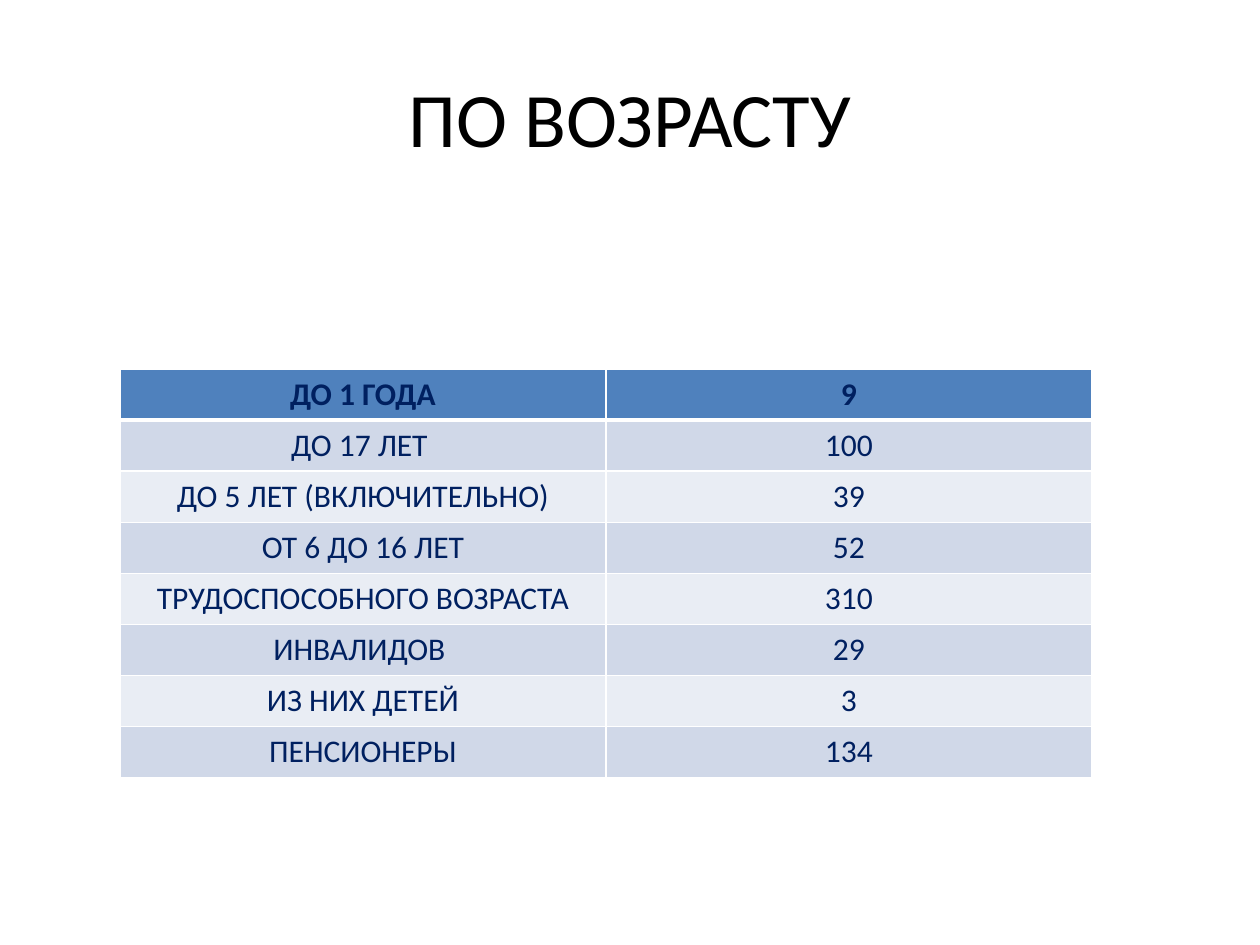
"""Build a slide with a table of residents by age."""
from lxml import etree
from pptx import Presentation
from pptx.dml.color import RGBColor
from pptx.enum.text import MSO_ANCHOR, PP_ALIGN
from pptx.oxml.ns import qn
from pptx.util import Pt

CENTER, MIDDLE = PP_ALIGN.CENTER, MSO_ANCHOR.MIDDLE
PX = 914400 // 126

TITLE = "ПО ВОЗРАСТУ"
ROWS = [
    ("ДО 1 ГОДА", "9"),
    ("ДО 17 ЛЕТ ", "100"),
    ("ДО 5 ЛЕТ (ВКЛЮЧИТЕЛЬНО)", "39"),
    ("ОТ 6 ДО 16 ЛЕТ", "52"),
    ("ТРУДОСПОСОБНОГО ВОЗРАСТА", "310"),
    ("ИНВАЛИДОВ ", "29"),
    ("ИЗ НИХ ДЕТЕЙ", "3"),
    ("ПЕНСИОНЕРЫ", "134"),
]
TITLE_BOX = (63, 38, 1134, 158)
LEFT, TOP, COL_W, ROW_H = 120, 369, 486, 51
HEADER, BANDS = "4F81BD", ("E9EDF4", "D0D8E8")
WHITE, NAVY, BLACK = "FFFFFF", "002060", "000000"


def rgb(value):
    return RGBColor.from_string(value)


def format_text(p, size, color, bold=False):
    p.alignment = CENTER
    p.font.name = "Calibri"
    p.font.size = Pt(size)
    p.font.bold = bold
    p.font.color.rgb = rgb(color)


def add_border(cell, side, width):
    tc_pr = cell._tc.get_or_add_tcPr()
    ln = etree.SubElement(tc_pr, qn(f"a:ln{side}"), w=str(Pt(width)))
    fill = etree.SubElement(ln, qn("a:solidFill"))
    etree.SubElement(fill, qn("a:srgbClr"), val=WHITE)


def add_title(s):
    sp = s.shapes.title
    sp.left, sp.top, sp.width, sp.height = (v * PX for v in TITLE_BOX)
    sp.text_frame.text = TITLE
    sp.text_frame.vertical_anchor = MIDDLE
    format_text(sp.text_frame.paragraphs[0], 44, BLACK)


def add_age_table(s):
    cols = len(ROWS[0])
    table = s.shapes.add_table(len(ROWS), cols, LEFT * PX, TOP * PX,
                               cols * COL_W * PX, len(ROWS) * ROW_H * PX).table
    for r, row in enumerate(ROWS):
        table.rows[r].height = ROW_H * PX
        widths = {"L": 1, "R": 1, "T": 3 if r == 1 else 1, "B": 3 if r == 0 else 1}
        for c, text in enumerate(row):
            cell = table.cell(r, c)
            cell.text = text
            format_text(cell.text_frame.paragraphs[0], 18, NAVY, r == 0)
            for side, width in widths.items():
                add_border(cell, side, width)
            cell.fill.solid()
            cell.fill.fore_color.rgb = rgb(BANDS[r % 2] if r else HEADER)


def main():
    prs = Presentation()
    prs.slide_width, prs.slide_height = 1260 * PX, 945 * PX
    s = prs.slides.add_slide(prs.slide_layouts[5])
    add_title(s)
    add_age_table(s)
    prs.save("out.pptx")


if __name__ == "__main__":
    main()
